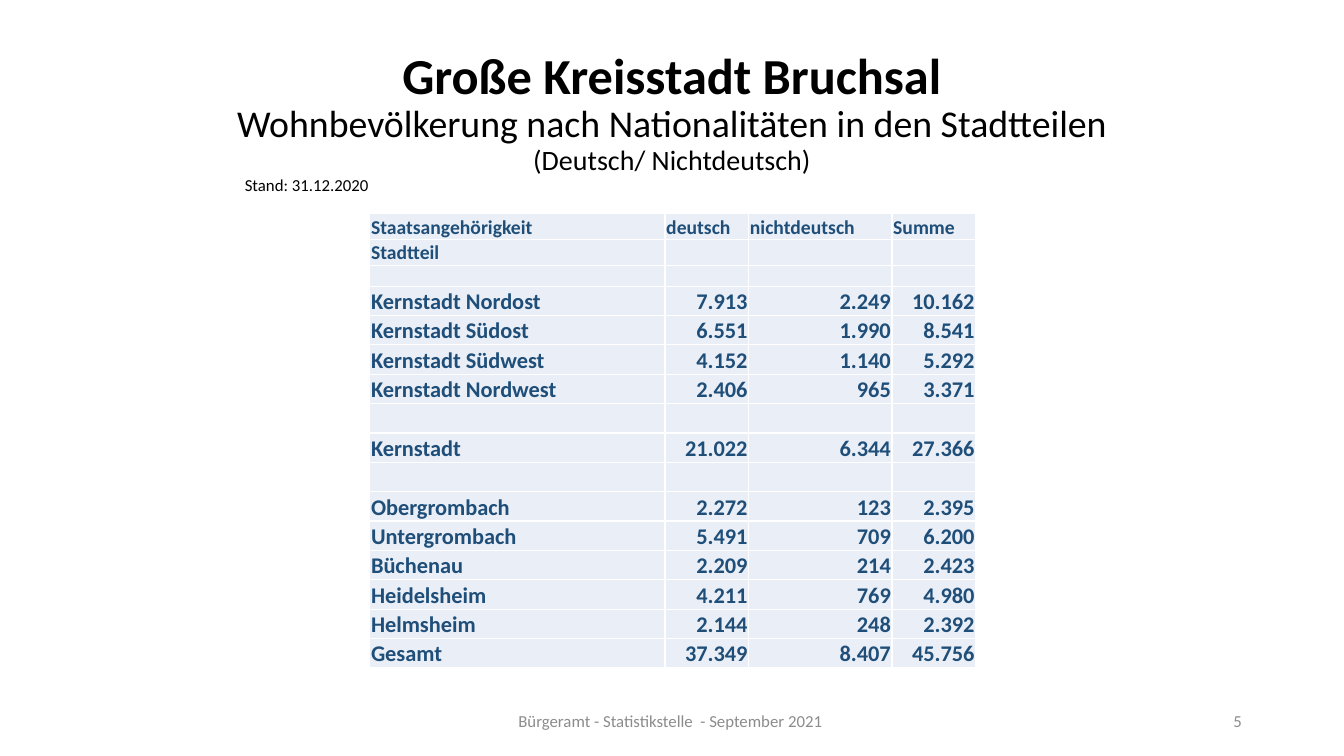
"""Build the slide on Bruchsal's population by nationality and district."""
from lxml import etree
from pptx import Presentation
from pptx.dml.color import RGBColor
from pptx.enum.text import MSO_ANCHOR, MSO_AUTO_SIZE, PP_ALIGN
from pptx.oxml.ns import qn
from pptx.util import Cm, Pt

LEFT, CENTER, RIGHT = PP_ALIGN.LEFT, PP_ALIGN.CENTER, PP_ALIGN.RIGHT
TOP, MIDDLE, BOTTOM = MSO_ANCHOR.TOP, MSO_ANCHOR.MIDDLE, MSO_ANCHOR.BOTTOM
NO_FIT = MSO_AUTO_SIZE.NONE

THEME = {
    "font": "Calibri",
    "black": RGBColor.from_string("000000"),
    "grey": RGBColor.from_string("8C8C8C"),
    "navy": RGBColor.from_string("1F4E79"),
    "pale": RGBColor.from_string("EAEFF7"),
    "border": "FFFFFF",
    "title": 36, "subtitle": 27, "detail": 20,
    "body": 16, "header": 14, "small": 12, "blank": 10,
}

TITLE_LINES = [
    ("Große Kreisstadt Bruchsal", "title", True),
    ("Wohnbevölkerung nach Nationalitäten in den Stadtteilen", "subtitle", False),
    ("(Deutsch/ Nichtdeutsch)", "detail", False),
]
NOTES = [
    ("Bürgeramt - Statistikstelle  - September 2021 ", (11.23, 17.65, 11.43, 1.02),
     "grey", CENTER, MIDDLE, True),
    ("5", (23.93, 17.65, 7.62, 1.02), "grey", RIGHT, MIDDLE, True),
    ("Stand: 31.12.2020", (5.92, 4.27, 3.66, 0.76), "black", LEFT, TOP, False),
]
BLANK_ROW = ("", "", "", "")
ROWS = [
    ("Staatsangehörigkeit", "deutsch", "nichtdeutsch", "Summe"),
    ("Stadtteil", "", "", ""),
    BLANK_ROW,
    ("Kernstadt Nordost", "7.913", "2.249", "10.162"),
    ("Kernstadt Südost", "6.551", "1.990", "8.541"),
    ("Kernstadt Südwest", "4.152", "1.140", "5.292"),
    ("Kernstadt Nordwest", "2.406", "965", "3.371"),
    BLANK_ROW,
    ("Kernstadt", "21.022", "6.344", "27.366"),
    BLANK_ROW,
    ("Obergrombach", "2.272", "123", "2.395"),
    ("Untergrombach", "5.491", "709", "6.200"),
    ("Büchenau", "2.209", "214", "2.423"),
    ("Heidelsheim", "4.211", "769", "4.980"),
    ("Helmsheim", "2.144", "248", "2.392"),
    ("Gesamt", "37.349", "8.407", "45.756"),
]
HEADER_HEIGHTS = [0.66, 0.64, 0.53]
ROW_HEIGHTS = HEADER_HEIGHTS + [0.74] * (len(ROWS) - len(HEADER_HEIGHTS))
COLUMN_WIDTHS = [7.44, 2.11, 3.61, 2.11]
CELL_FORMAT = {
    "vertical_anchor": BOTTOM, "margin_left": Cm(0.03), "margin_right": Cm(0.03),
    "margin_top": Cm(0.03), "margin_bottom": 0,
}


def add_span(para, text, size, color, bold=False):
    """Add a formatted run to a paragraph."""
    span = para.add_run()
    span.text = text
    span.font.color.rgb = THEME[color]
    for name, value in {"name": THEME["font"], "size": Pt(THEME[size]), "bold": bold}.items():
        setattr(span.font, name, value)


def add_borders(cell):
    """Draw a thin line on every side of a table cell."""
    properties = cell._tc.get_or_add_tcPr()
    for side in ("lnL", "lnR", "lnT", "lnB"):
        line = etree.SubElement(properties, qn(f"a:{side}"), w=str(Pt(1)))
        fill = etree.SubElement(line, qn("a:solidFill"))
        etree.SubElement(fill, qn("a:srgbClr"), val=THEME["border"])


deck = Presentation()
deck.slide_width, deck.slide_height = Cm(33.87), Cm(19.05)
page = deck.slides.add_slide(deck.slide_layouts[5])

title = page.shapes.title
title.left, title.top, title.width, title.height = Cm(2.33), Cm(1.02), Cm(29.21), Cm(3.68)
for name, value in {"vertical_anchor": MIDDLE, "auto_size": NO_FIT, "word_wrap": True}.items():
    setattr(title.text_frame, name, value)
para = title.text_frame.paragraphs[0]
para.alignment, para.line_spacing = CENTER, 0.9
for index, (text, size, bold) in enumerate(TITLE_LINES):
    if index:
        para.add_line_break()
    add_span(para, text, size, "black", bold)

table = page.shapes.add_table(
    len(ROWS), len(COLUMN_WIDTHS), Cm(9.32), Cm(5.38),
    Cm(sum(COLUMN_WIDTHS)), Cm(sum(ROW_HEIGHTS))).table
table.first_row = table.horz_banding = False
for column, width in zip(table.columns, COLUMN_WIDTHS):
    column.width = Cm(width)
for row_index, (row, height, texts) in enumerate(zip(table.rows, ROW_HEIGHTS, ROWS)):
    row.height = Cm(height)
    is_header = row_index < len(HEADER_HEIGHTS)
    for column_index, (cell, text) in enumerate(zip(row.cells, texts)):
        for name, value in CELL_FORMAT.items():
            setattr(cell, name, value)
        add_borders(cell)
        cell.fill.solid()
        cell.fill.fore_color.rgb = THEME["pale"]
        para = cell.text_frame.paragraphs[0]
        para.alignment = LEFT if is_header or column_index == 0 else RIGHT
        if text:
            add_span(para, text, "header" if is_header else "body", "navy", True)
        else:
            etree.SubElement(para._p, qn("a:endParaRPr"), sz=str(THEME["blank"] * 100))

for text, place, color, alignment, anchor, wrap in NOTES:
    box = page.shapes.add_textbox(*map(Cm, place))
    box.text_frame.word_wrap = wrap
    box.text_frame.vertical_anchor = anchor
    para = box.text_frame.paragraphs[0]
    para.alignment = alignment
    add_span(para, text, "small", color)

deck.save("out.pptx")
